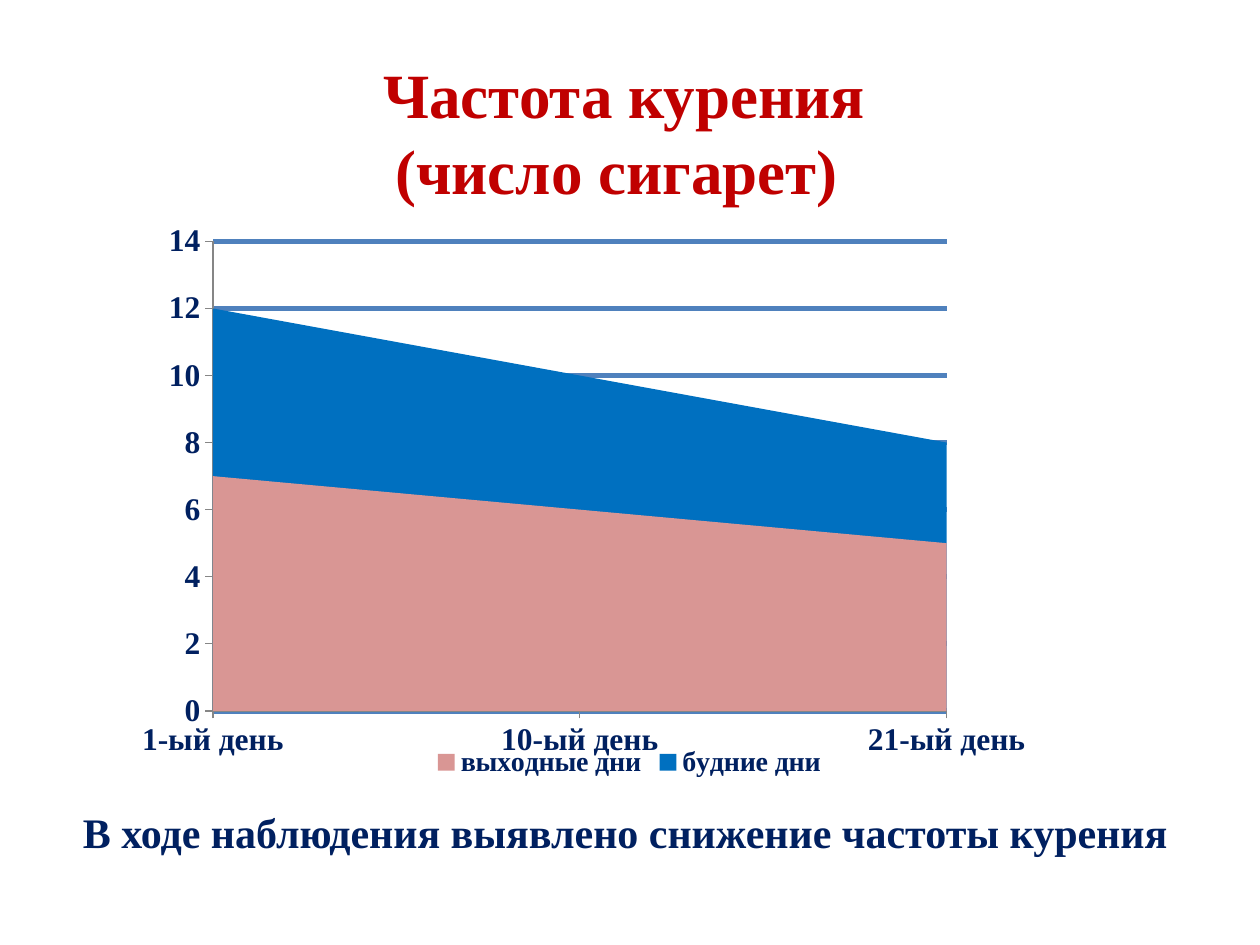
from lxml import etree
from pptx import Presentation, util as u
from pptx.chart.data import CategoryChartData
from pptx.dml.color import RGBColor
from pptx.enum import chart as charts, text
from pptx.oxml.ns import qn

RED, NAVY, GRID, GREY = "C00000", "002060", "4F81BD", "868686"
ROSE, BLUE = "D99694", "0070C0"


def rgb(value):
    return RGBColor.from_string(value)


class SlideBuilder:
    """Holds the style and the current slide; lengths are in inches on a 10 by 7.5 grid."""

    face = "Times New Roman"

    def __init__(self, deck, layout):
        self.slide = deck.slides.add_slide(deck.slide_layouts[layout])
        self.column = deck.slide_width / 10
        self.row = deck.slide_height / 7.5

    def place(self, left, top, width, height):
        return (u.Emu(int(left * self.column)), u.Emu(int(top * self.row)),
                u.Emu(int(width * self.column)), u.Emu(int(height * self.row)))

    def style(self, font, size, color):
        font.name, font.size, font.bold = self.face, u.Pt(size), True
        font.color.rgb = rgb(color)

    def fill_text(self, frame, content, size, color):
        frame.text = content
        frame.word_wrap = True
        frame.auto_size = text.MSO_AUTO_SIZE.NONE
        frame.vertical_anchor = text.MSO_ANCHOR.TOP
        for paragraph in frame.paragraphs:
            paragraph.alignment = text.PP_ALIGN.CENTER
            for run in paragraph.runs:
                self.style(run.font, size, color)

    def title(self, content, box, size, color):
        heading = self.slide.shapes.title
        heading.left, heading.top, heading.width, heading.height = self.place(*box)
        self.fill_text(heading.text_frame, content, size, color)

    def caption(self, content, box, size, color):
        note = self.slide.shapes.add_textbox(*self.place(*box))
        self.fill_text(note.text_frame, content, size, color)

    def area_chart(self, days, series, box, plot_share, top_value, step):
        data = CategoryChartData()
        data.categories = days
        for name, values, _ in series:
            data.add_series(name, values)
        chart = self.slide.shapes.add_chart(
            charts.XL_CHART_TYPE.AREA, *self.place(*box), data).chart
        chart.has_title = False
        chart.font.size = u.Pt(18)

        # Series colours
        for area, (_, _, color) in zip(chart.plots[0].series, series):
            area.format.fill.solid()
            area.format.fill.fore_color.rgb = rgb(color)

        # Axes and gridlines
        for axis in (chart.category_axis, chart.value_axis):
            self.style(axis.tick_labels.font, 18, NAVY)
            axis.major_tick_mark = charts.XL_TICK_MARK.OUTSIDE
            axis.minor_tick_mark = charts.XL_TICK_MARK.NONE
            axis.format.line.color.rgb = rgb(GREY)
            axis.format.line.width = u.Pt(0.75)
        chart.category_axis.has_major_gridlines = False
        scale = chart.value_axis
        scale.minimum_scale, scale.maximum_scale, scale.major_unit = 0, top_value, step
        scale.has_major_gridlines = True
        scale.major_gridlines.format.line.color.rgb = rgb(GRID)
        scale.major_gridlines.format.line.width = u.Pt(3)

        # Legend
        chart.has_legend = True
        chart.legend.position = charts.XL_LEGEND_POSITION.BOTTOM
        chart.legend.include_in_layout = False
        self.style(chart.legend.font, 16, NAVY)

        self.fix_plot(chart, plot_share)

    def fix_plot(self, chart, plot_share):
        plot = chart.element.find(".//" + qn("c:plotArea")) if hasattr(chart, "element") \
            else chart.plots[0]._element.getparent()
        for crossing in plot.iter(qn("c:crossBetween")):
            crossing.set("val", "midCat")
        for previous in plot.findall(qn("c:layout")):
            plot.remove(previous)
        layout = etree.Element(qn("c:layout"))
        plot.insert(0, layout)
        manual = etree.SubElement(layout, qn("c:manualLayout"))
        settings = [("layoutTarget", "inner"), ("xMode", "edge"), ("yMode", "edge")]
        settings += zip("xywh", plot_share)
        for tag, value in settings:
            etree.SubElement(manual, qn("c:" + tag)).set("val", str(value))


def main():
    deck = Presentation()
    deck.slide_width, deck.slide_height = u.Inches(10), u.Inches(7.5)
    page = SlideBuilder(deck, layout=5)

    # Heading
    page.title("Частота курения\n(число сигарет) ", (0.98, 0.39, 7.95, 1.31), 36, RED)

    # Cigarettes smoked on each day of observation
    page.area_chart(
        ["1-ый день", "10-ый день", "21-ый день"],
        [("выходные дни", (7, 6, 5), ROSE), ("будние дни", (12, 10, 8), BLUE)],
        box=(1.06, 1.78, 7.87, 4.44), plot_share=(0.08, 0.03, 0.74, 0.84),
        top_value=14, step=2)

    # Conclusion
    page.caption("В ходе наблюдения выявлено снижение частоты курения ",
                 (0.28, 6.35, 9.45, 0.5), 24, NAVY)

    deck.save("out.pptx")


if __name__ == "__main__":
    main()
